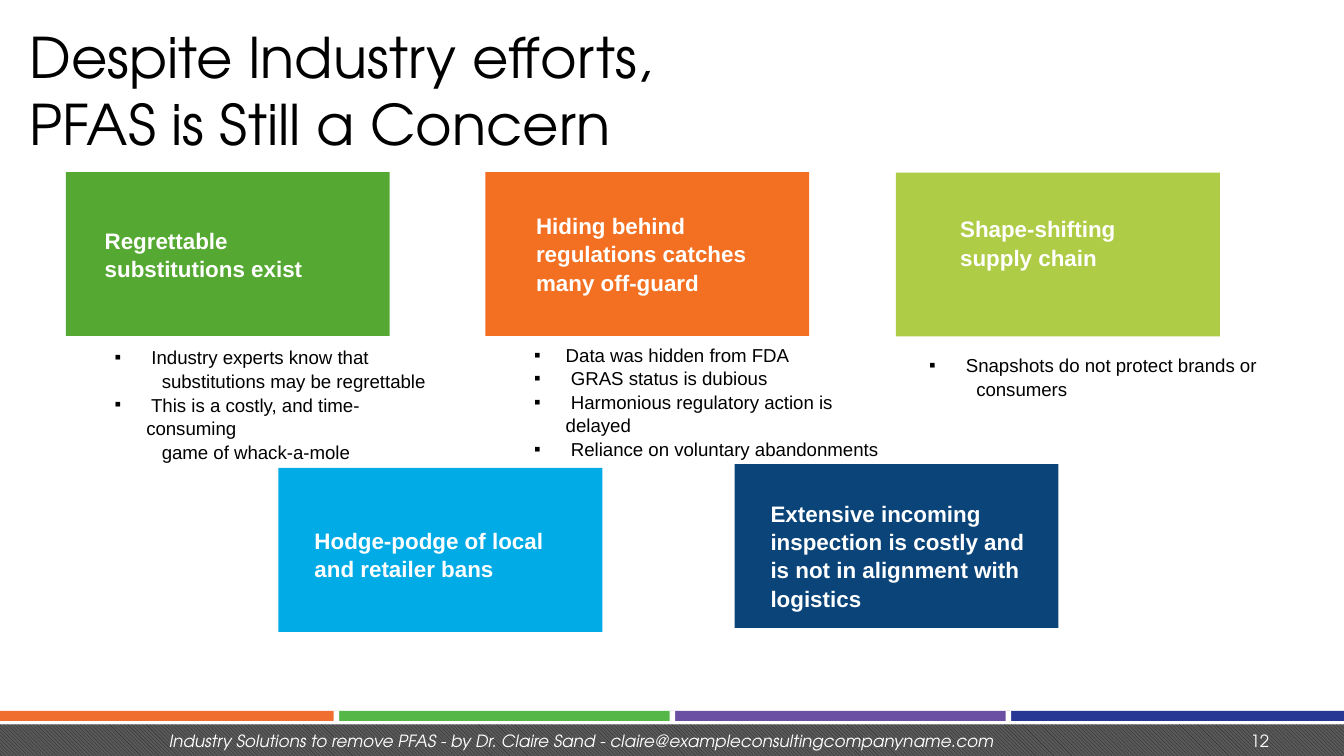
from pptx import Presentation
from pptx.dml.color import RGBColor
from pptx.enum.dml import MSO_PATTERN
from pptx.enum.shapes import MSO_SHAPE
from pptx.enum.text import MSO_ANCHOR, PP_ALIGN
from pptx.oxml.ns import qn
from pptx.util import Pt
from lxml.etree import SubElement

W, H = 720, 405
CARD_W, CARD_H = 173.5, 87.8
BODY, DISPLAY = "Arial", "TeX Gyre Adventor"
COLORS = {
    "black": "000000", "white": "FFFFFF",
    "green": "55A932", "orange": "F36F21", "lime": "AECC45",
    "sky": "00ABE6", "navy": "0A4479",
    "bar_orange": "F06F30", "bar_green": "56B749",
    "bar_purple": "6A4FA2", "bar_blue": "263894",
    "hatch": "262626", "hatch_back": "595959",
}
HEADING = {"name": BODY, "size": Pt(12), "bold": True}
BULLET = {"name": BODY, "size": Pt(10)}
TITLE = {"name": DISPLAY, "size": Pt(30), "bold": False}
FOOTER = {"name": DISPLAY, "size": Pt(9)}


def rgb(name):
    return RGBColor.from_string(COLORS[name])


def style(p, fmt, color):
    for r in p.runs:
        for key, value in fmt.items():
            setattr(r.font, key, value)
        r.font.color.rgb = rgb(color)


def add_rect(s, box, color=None):
    sp = s.shapes.add_shape(MSO_SHAPE.RECTANGLE, *map(Pt, box))
    sp.shadow.inherit = False
    sp.line.fill.background()
    if color:
        sp.fill.solid()
        sp.fill.fore_color.rgb = rgb(color)
    return sp


def add_text(s, box, lines, fmt, color, align=PP_ALIGN.LEFT, spacing=None):
    tf = s.shapes.add_textbox(*map(Pt, box)).text_frame
    tf.word_wrap = True
    for i, line in enumerate(lines):
        p = tf.add_paragraph() if i else tf.paragraphs[0]
        p.text, p.alignment, p.line_spacing = line, align, spacing
        style(p, fmt, color)
    return tf


def set_indent(p, left, first=0, bullet=None):
    pPr = p._p.get_or_add_pPr()
    pPr.set("marL", str(Pt(left)))
    pPr.set("indent", str(Pt(first)))
    if bullet:
        SubElement(pPr, qn("a:buFont")).set("typeface", BODY)
        SubElement(pPr, qn("a:buChar")).set("char", bullet)
    else:
        SubElement(pPr, qn("a:buNone"))


def add_title(s, box, text):
    sp = s.shapes.title
    sp.left, sp.top, sp.width, sp.height = map(Pt, box)
    tf = sp.text_frame
    tf.margin_left = tf.margin_right = tf.margin_top = tf.margin_bottom = 0
    tf.vertical_anchor = MSO_ANCHOR.TOP
    tf.word_wrap = True
    tf.text = text
    p = tf.paragraphs[0]
    p.alignment = PP_ALIGN.LEFT
    style(p, TITLE, "black")


def add_card(s, box, color, text, inset):
    """Coloured card; inset is the label's left, top and width in the card."""
    x, y, w, h = box
    dx, dy, label_w = inset
    add_rect(s, box, color)
    tf = add_text(s, (x + dx, y + dy, label_w, h - dy), [text],
                  HEADING, "white", spacing=1.05)
    set_indent(tf.paragraphs[0], 12.2 if color != "green" else 0)


def add_bullets(s, box, items):
    """Each item is a bulleted line, or a (bulleted, continued) pair."""
    lines = [(line, i == 0) for item in items for i, line in enumerate(item)]
    tf = add_text(s, box, [line for line, _ in lines], BULLET, "black", spacing=1.05)
    for p, (_, is_first) in zip(tf.paragraphs, lines):
        if is_first:
            set_indent(p, 36, -17, "▪")
        else:
            set_indent(p, 44.3)


def add_footer(s, box, text, number):
    x, y, w, h = box
    # Hatched band
    band = add_rect(s, (x, y + 7.3, w, h - 7.3))
    band.fill.patterned()
    band.fill.pattern = MSO_PATTERN.DARK_DOWNWARD_DIAGONAL
    band.fill.fore_color.rgb = rgb("hatch")
    band.fill.back_color.rgb = rgb("hatch_back")
    # Colour bars with white dividers
    bars = ("bar_orange", "bar_green", "bar_purple", "bar_blue")
    step = w / len(bars)
    for i, color in enumerate(bars):
        add_rect(s, (x + i * step, y, step, 5.5), color)
    for i in range(1, len(bars)):
        add_rect(s, (x + i * step - 1.2, y, 2.9, 5.5), "white")
    # Footer text and page number
    add_text(s, (x + 15.8, y + 7.3, 591, 14.4), [text],
             {**FOOTER, "italic": True}, "white", PP_ALIGN.CENTER)
    add_text(s, (x + 610, y + 7.3, 77, 14.4), [number],
             FOOTER, "white", PP_ALIGN.RIGHT)


def main():
    prs = Presentation()
    prs.slide_width, prs.slide_height = Pt(W), Pt(H)
    s = prs.slides.add_slide(prs.slide_layouts[5])

    add_footer(s, (0, 380.8, W, H - 380.8),
               "Industry Solutions to remove PFAS - by Dr. Claire Sand - "
               "claire@exampleconsultingcompanyname.com", "12")
    add_title(s, (15.8, 12.2, 658, 38.2),
              "Despite Industry efforts,\vPFAS is Still a Concern")

    # Cards: left, top, colour, label, label inset
    cards = [
        (35.3, 92.2, "green", "Regrettable substitutions exist", (13.7, 25.2, 136.8)),
        (260, 92.2, "orange", "Hiding behind regulations catches many off-guard",
         (7.9, 17.3, 150.5)),
        (480, 92.5, "lime", "Shape-shifting supply chain", (15.1, 18.7, 136.8)),
        (149.2, 250.7, "sky", "Hodge-podge of local and retailer bans", (0, 27.2, 157)),
        (393.5, 248.6, "navy", "Extensive incoming inspection is costly and "
         "is not in alignment with logistics", (0, 15.1, CARD_W)),
    ]
    for x, y, color, text, inset in cards:
        add_card(s, (x, y, CARD_W, CARD_H), color, text, inset)

    # Bullets under the top row
    add_bullets(s, (35.3, 181.4, 211, 67.7), [
        (" Industry experts know that", "substitutions may be regrettable"),
        (" This is a costly, and time-consuming", "game of whack-a-mole"),
    ])
    add_bullets(s, (260, 180, 221.8, 67.7), [
        ("Data was hidden from FDA",),
        (" GRAS status is dubious",),
        (" Harmonious regulatory action is delayed",),
        (" Reliance on voluntary abandonments",),
    ])
    add_bullets(s, (471.6, 185.6, 234, 44), [
        (" Snapshots do not protect brands or", "consumers"),
    ])
    prs.save("out.pptx")


if __name__ == "__main__":
    main()
